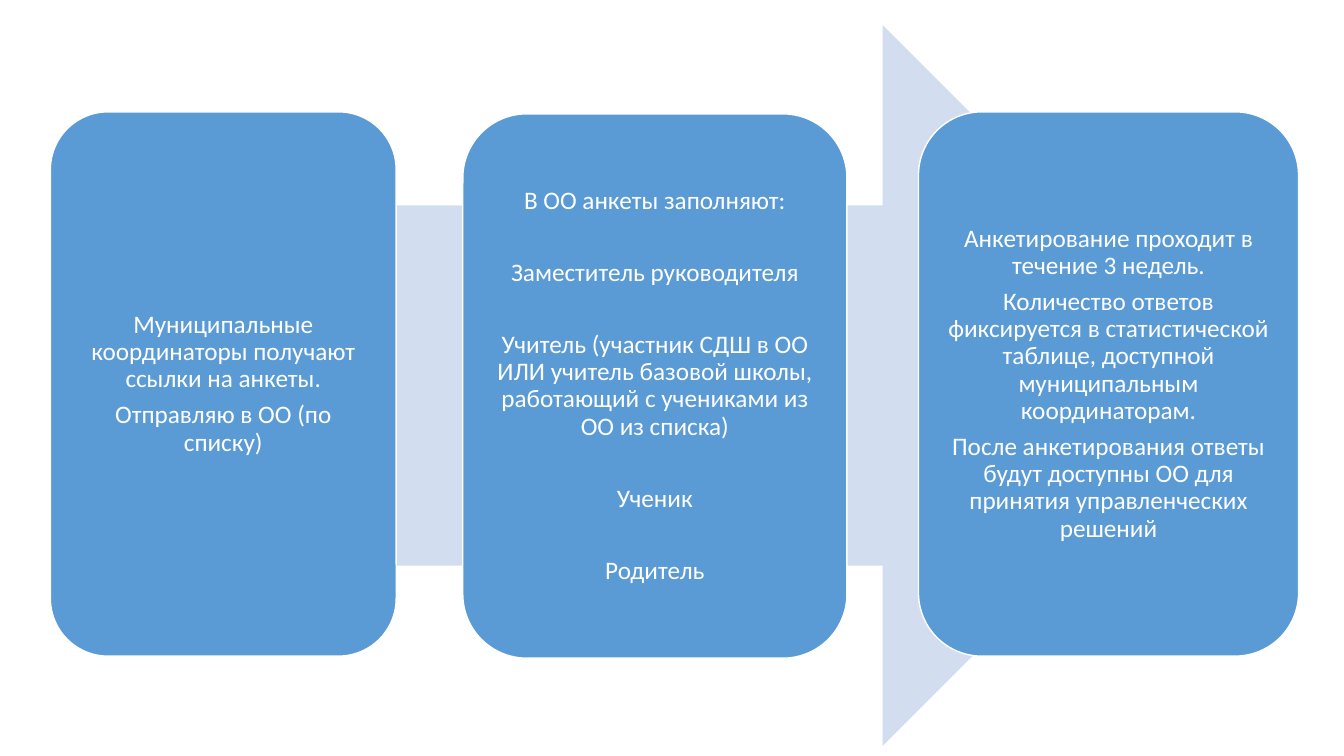
from dataclasses import dataclass

from pptx import Presentation
from pptx.dml.color import RGBColor
from pptx.enum.shapes import MSO_SHAPE
from pptx.enum.text import MSO_ANCHOR, PP_ALIGN
from pptx.util import Inches, Pt

# Content: left edge, top, width, gap between paragraphs (pt), paragraphs
STAGES = [
    (0.5, 1.11, 3.43, 6.3, [
        "Муниципальные координаторы получают ссылки на анкеты.",
        "Отправляю в ОО (по списку)",
    ]),
    (4.59, 1.13, 3.81, 32, [
        "В ОО анкеты заполняют:",
        "Заместитель руководителя",
        "Учитель (участник СДШ в ОО ИЛИ учитель базовой школы, "
        "работающий с учениками из ОО из списка)",
        "Ученик",
        "Родитель",
    ]),
    (9.11, 1.11, 3.77, 6.3, [
        "Анкетирование проходит в течение 3 недель.",
        "Количество ответов фиксируется в статистической таблице, "
        "доступной муниципальным координаторам.",
        "После анкетирования ответы будут доступны ОО для принятия "
        "управленческих решений",
    ]),
]


@dataclass(frozen=True)
class Theme:
    arrow: RGBColor = RGBColor(0xD2, 0xDE, 0xEF)
    card: RGBColor = RGBColor(0x5B, 0x9B, 0xD5)
    light: RGBColor = RGBColor(0xFF, 0xFF, 0xFF)
    font: str = "Calibri"
    size: Pt = Pt(18)


THEME = Theme()
SLIDE_WIDTH, SLIDE_HEIGHT = 13.33, 7.5
ARROW_WIDTH, ARROW_HEIGHT, ARROW_TOP = SLIDE_WIDTH * 0.85, 7.15, 0.25
CARD_HEIGHT = SLIDE_HEIGHT * 0.72
INSET = 0.07


def add_block(slide, preset, left, top, width, height, color):
    block = slide.shapes.add_shape(
        preset, Inches(left), Inches(top), Inches(width), Inches(height))
    block.shadow.inherit = False
    block.fill.solid()
    block.fill.fore_color.rgb = color
    block.line.fill.background()
    return block


def add_stage(slide, left, top, width, gap, statements):
    card = add_block(slide, MSO_SHAPE.ROUNDED_RECTANGLE,
                     left, top, width, CARD_HEIGHT, THEME.card)
    card.line.color.rgb = THEME.light
    card.line.width = Pt(1)

    frame = card.text_frame
    frame.word_wrap = True
    frame.vertical_anchor = MSO_ANCHOR.MIDDLE
    frame.margin_left = frame.margin_right = Inches(INSET)
    frame.margin_top = frame.margin_bottom = Inches(INSET)
    for index, statement in enumerate(statements):
        paragraph = frame.add_paragraph() if index else frame.paragraphs[0]
        paragraph.text = statement
        paragraph.alignment = PP_ALIGN.CENTER
        paragraph.line_spacing = 0.9
        paragraph.space_before = Pt(gap if index else 0)
        paragraph.font.name = THEME.font
        paragraph.font.size = THEME.size
        paragraph.font.color.rgb = THEME.light


def main():
    deck = Presentation()
    deck.slide_width = Inches(SLIDE_WIDTH)
    deck.slide_height = Inches(SLIDE_HEIGHT)
    slide = deck.slides.add_slide(deck.slide_layouts[6])

    # Process arrow, centred across the slide behind the stages
    add_block(slide, MSO_SHAPE.RIGHT_ARROW, (SLIDE_WIDTH - ARROW_WIDTH) / 2,
              ARROW_TOP, ARROW_WIDTH, ARROW_HEIGHT, THEME.arrow)

    # Stages from left to right
    for stage in STAGES:
        add_stage(slide, *stage)

    deck.save("out.pptx")


if __name__ == "__main__":
    main()
